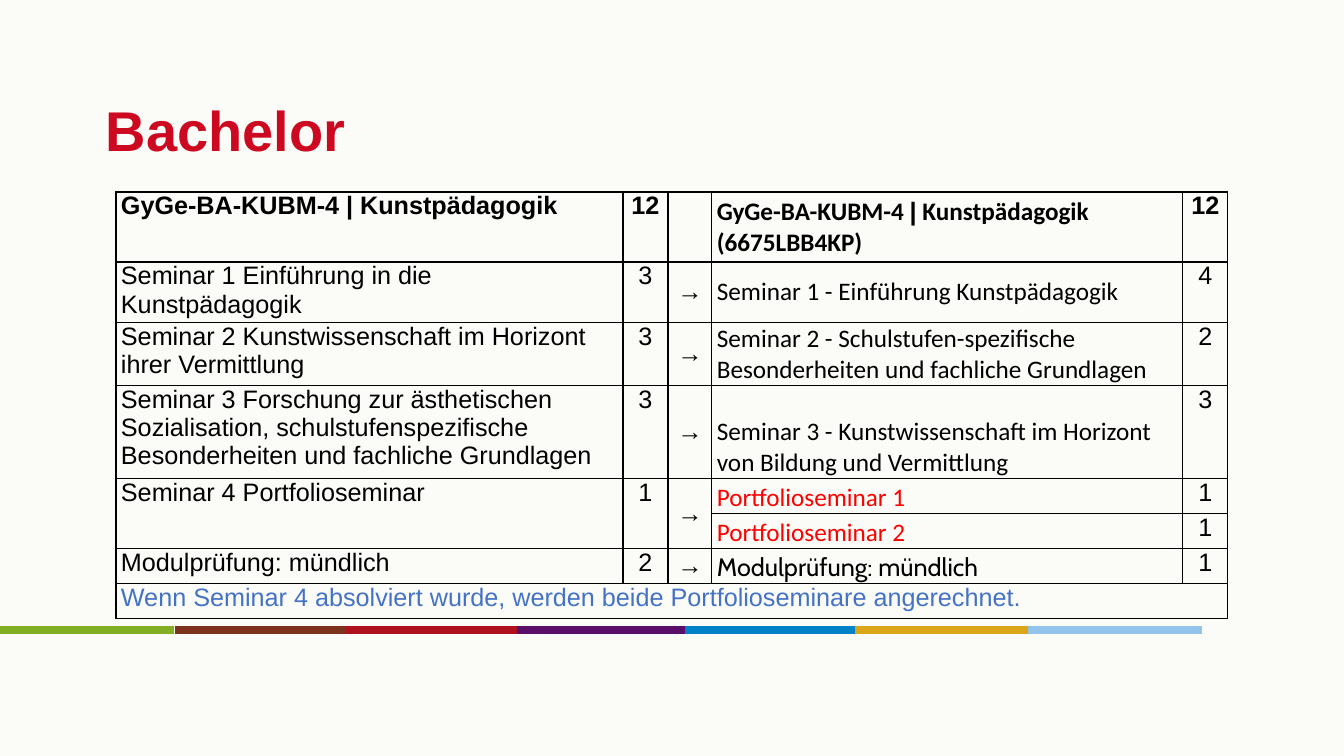
from pptx import Presentation
from pptx.dml.color import RGBColor
from pptx.enum.shapes import MSO_CONNECTOR
from pptx.enum.text import MSO_ANCHOR, PP_ALIGN
from pptx.oxml.ns import qn
from pptx.util import Emu, Pt
from lxml import etree

PX = 914400 / 100.8
LEFT, CENTER = PP_ALIGN.LEFT, PP_ALIGN.CENTER
TOP, MIDDLE, BOTTOM = MSO_ANCHOR.TOP, MSO_ANCHOR.MIDDLE, MSO_ANCHOR.BOTTOM
STRAIGHT = MSO_CONNECTOR.STRAIGHT

COLORS = {
    "page": "FBFCF8", "title": "CD0921", "text": "000000",
    "new": "FF0000", "note": "4472C4",
}
STRIPES = {
    0: "83AF23", 175: "7D321D", 346: "AF111D", 517: "590F68",
    685: "0082C6", 855: "DBA619", 1028: "91C4EA",
}
STRIPE_WIDTH = 174
COLUMN_WIDTHS = [507, 45, 44, 471, 45]
ROW_HEIGHTS = [70, 57, 63, 93, 35, 35, 35, 35]

# Old course, old points, arrow, new course, new points, anchor of new course
COURSES = [
    ("GyGe-BA-KUBM-4 | Kunstpädagogik", "12", "",
     "GyGe-BA-KUBM-4 | Kunstpädagogik (6675LBB4KP)", "12", MIDDLE),
    ("Seminar 1 Einführung in die Kunstpädagogik", "3", "→",
     "Seminar 1 - Einführung Kunstpädagogik", "4", MIDDLE),
    ("Seminar 2 Kunstwissenschaft im Horizont ihrer Vermittlung", "3", "→",
     "Seminar 2 - Schulstufen-spezifische Besonderheiten und fachliche Grundlagen",
     "2", BOTTOM),
    ("Seminar 3 Forschung zur ästhetischen Sozialisation, schulstufenspezifische "
     "Besonderheiten und fachliche Grundlagen", "3", "→",
     "Seminar 3 - Kunstwissenschaft im Horizont von Bildung und Vermittlung",
     "3", BOTTOM),
    ("Seminar 4 Portfolioseminar", "1", "→", "Portfolioseminar 1", "1", BOTTOM),
    ("", "", "", "Portfolioseminar 2", "1", BOTTOM),
    ("Modulprüfung: mündlich", "2", "→", "Modulprüfung: mündlich", "1", BOTTOM),
]
NOTE = "Wenn Seminar 4 absolviert wurde, werden beide Portfolioseminare angerechnet."


def px(length):
    return Emu(round(length * PX))


def rgb(value):
    return RGBColor.from_string(value)


def add_span(para, text, size, color, font="Arial", bold=False):
    span = para.add_run()
    span.text = text
    span.font.name = font
    span.font.size = Pt(size)
    span.font.bold = bold
    span.font.color.rgb = rgb(color)


def add_borders(cell):
    properties = cell._tc.get_or_add_tcPr()
    for side in ("a:lnL", "a:lnR", "a:lnT", "a:lnB"):
        line = etree.SubElement(properties, qn(side), w=str(Pt(1)))
        fill = etree.SubElement(line, qn("a:solidFill"))
        etree.SubElement(fill, qn("a:srgbClr"), val=COLORS["text"])


def add_stripes(page, left, middle):
    for start, color in STRIPES.items():
        x = left + start
        stripe = page.shapes.add_connector(
            STRAIGHT, px(x), px(middle), px(x + STRIPE_WIDTH), px(middle))
        stripe.line.color.rgb = rgb(color)
        stripe.line.width = Pt(5.5)
        etree.SubElement(stripe._element.spPr, qn("a:effectLst"))


def add_title(page, left, top, width, height):
    box = page.shapes.add_textbox(px(left), px(top), px(width), px(height))
    frame = box.text_frame
    frame.word_wrap = True
    frame.vertical_anchor = MIDDLE
    frame.margin_left = frame.margin_right = px(5)
    frame.margin_top = frame.margin_bottom = px(5)
    add_span(frame.paragraphs[0], "Bachelor", 40, COLORS["title"], bold=True)


def style_cell(cell, anchor):
    cell.margin_left = cell.margin_right = px(5)
    cell.margin_top = cell.margin_bottom = 0
    cell.vertical_anchor = anchor
    add_borders(cell)
    cell.fill.background()


def fill_course(table, row, course):
    *texts, new_anchor = course
    aligns = (LEFT, CENTER, CENTER, LEFT, CENTER)
    anchors = (TOP, TOP, MIDDLE, new_anchor, TOP)
    for column, text in enumerate(texts):
        cell = table.cell(row, column)
        style_cell(cell, anchors[column])
        para = cell.text_frame.paragraphs[0]
        para.alignment = aligns[column]
        if not text:
            continue
        font, color = "Arial", COLORS["text"]
        if column == 3:
            font = "Cabin" if text.startswith("Modul") else "Calibri"
            if text.startswith("Portfolio"):
                color = COLORS["new"]
        # The separator bar stays in Arial
        before, bar, after = text.partition("|")
        for part, face in ((before, font), (bar, "Arial"), (after, font)):
            if part:
                add_span(para, part, 18, color, face, bold=row == 0)


def add_course_table(page, left, top):
    rows, columns = len(ROW_HEIGHTS), len(COLUMN_WIDTHS)
    table = page.shapes.add_table(
        rows, columns, px(left), px(top),
        px(sum(COLUMN_WIDTHS)), px(sum(ROW_HEIGHTS))).table
    table.first_row = table.horz_banding = False
    for column, width in zip(table.columns, COLUMN_WIDTHS):
        column.width = px(width)
    for row, height in zip(table.rows, ROW_HEIGHTS):
        row.height = px(height)

    for row, course in enumerate(COURSES):
        fill_course(table, row, course)
    # One old portfolio seminar faces two new ones
    for column in range(3):
        table.cell(4, column).merge(table.cell(5, column))

    # Note across the last row
    last = rows - 1
    for column in range(columns):
        style_cell(table.cell(last, column), TOP)
    note = table.cell(last, 0)
    note.merge(table.cell(last, columns - 1))
    add_span(note.text_frame.paragraphs[0], NOTE, 18, COLORS["note"])


def main():
    deck = Presentation()
    deck.slide_width, deck.slide_height = px(1344), px(756)
    page = deck.slides.add_slide(deck.slide_layouts[6])
    page.background.fill.solid()
    page.background.fill.fore_color.rgb = rgb(COLORS["page"])
    add_stripes(page, 0, 630)
    add_title(page, 101, 66, 1142, 126)
    add_course_table(page, 116, 192)
    deck.save("out.pptx")


if __name__ == "__main__":
    main()
